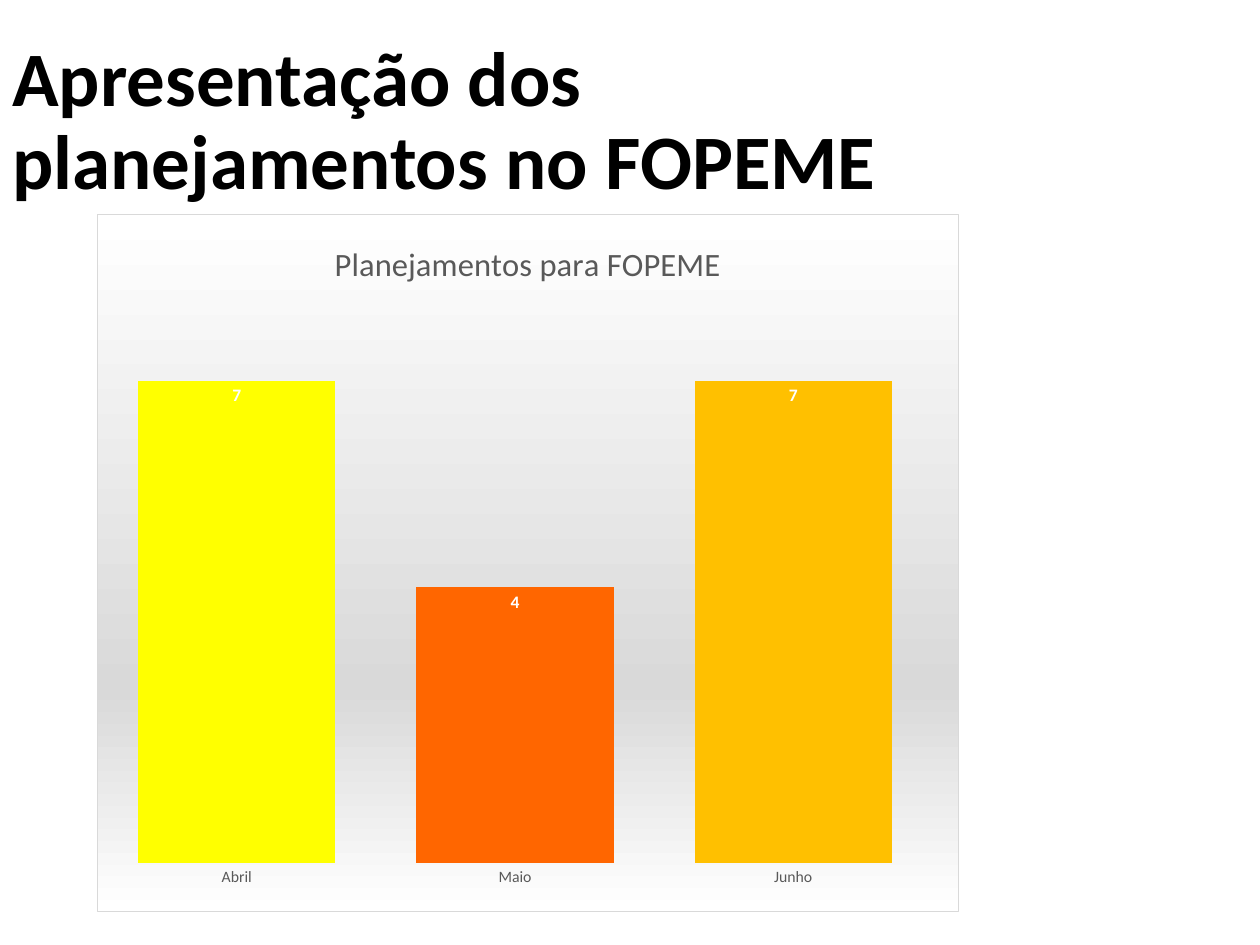
from dataclasses import dataclass

import pptx
import pptx.chart.data
import pptx.dml.color
import pptx.enum.chart
import pptx.enum.text
import pptx.oxml
import pptx.oxml.ns
import pptx.util

Inches = pptx.util.Inches
Pt = pptx.util.Pt
RGBColor = pptx.dml.color.RGBColor

BLACK = RGBColor(0x00, 0x00, 0x00)
WHITE = RGBColor(0xFF, 0xFF, 0xFF)
GREY = RGBColor(0x59, 0x59, 0x59)
SILVER = RGBColor(0xD9, 0xD9, 0xD9)
YELLOW = RGBColor(0xFF, 0xFF, 0x00)
ORANGE = RGBColor(0xFF, 0x66, 0x00)
GOLD = RGBColor(0xFF, 0xC0, 0x00)
FACE = "Calibri"


@dataclass
class Month:
    name: str
    plans: int
    color: RGBColor


MONTHS = [
    Month("Abril", 7, YELLOW),
    Month("Maio", 4, ORANGE),
    Month("Junho", 7, GOLD),
]


def style(font, size: float, color: RGBColor, bold: bool = False) -> None:
    font.name = FACE
    font.size = Pt(size)
    font.bold = bold
    font.color.rgb = color


def add_title(slide, text: str) -> None:
    box = slide.shapes.add_textbox(Inches(0), Inches(0.25), Inches(8.62), Inches(1.45))
    frame = box.text_frame
    frame.word_wrap = True
    frame.margin_right = Inches(0.2)
    frame.vertical_anchor = pptx.enum.text.MSO_ANCHOR.MIDDLE
    para = frame.paragraphs[0]
    para.line_spacing = 0.9
    run = para.add_run()
    run.text = text
    style(run.font, 44, BLACK, True)


def fill_back(chart) -> None:
    """Give the chart area a vertical gradient and a thin border."""
    stops = "".join(
        f'<a:gs pos="{pos * 1000}"><a:srgbClr val="{color}"/></a:gs>'
        for pos, color in [(0, WHITE), (68, SILVER), (100, WHITE)]
    )
    area = pptx.oxml.parse_xml(
        f'<c:spPr {pptx.oxml.ns.nsdecls("c", "a")}>'
        f'<a:gradFill><a:gsLst>{stops}</a:gsLst><a:lin ang="5400000" scaled="0"/></a:gradFill>'
        f'<a:ln w="{Pt(0.75)}"><a:solidFill><a:srgbClr val="{SILVER}"/></a:solidFill></a:ln>'
        "</c:spPr>"
    )
    chart._chartSpace.find(pptx.oxml.ns.qn("c:chart")).addnext(area)


def place_plot(chart, left: float, top: float, width: float, height: float) -> None:
    """Fix the inner plot area, in fractions of the chart."""
    plot = chart._chartSpace.chart.plotArea
    for old in plot.findall(pptx.oxml.ns.qn("c:layout")):
        plot.remove(old)
    parts = '<c:layoutTarget val="inner"/><c:xMode val="edge"/><c:yMode val="edge"/>'
    for key, val in zip("xywh", (left, top, width, height)):
        parts += f'<c:{key} val="{val}"/>'
    plot.insert(0, pptx.oxml.parse_xml(
        f'<c:layout {pptx.oxml.ns.nsdecls("c")}><c:manualLayout>{parts}</c:manualLayout></c:layout>'
    ))


def add_bars(slide, title: str, months: list[Month]) -> None:
    data = pptx.chart.data.CategoryChartData()
    data.categories = [month.name for month in months]
    data.add_series("Series 1", [month.plans for month in months])
    kinds = pptx.enum.chart
    chart = slide.shapes.add_chart(
        kinds.XL_CHART_TYPE.COLUMN_CLUSTERED,
        Inches(0.77), Inches(1.7), Inches(6.84), Inches(5.54), data,
    ).chart
    style(chart.font, 10, BLACK)
    chart.has_legend = False

    # Chart title
    chart.has_title = True
    run = chart.chart_title.text_frame.paragraphs[0].add_run()
    run.text = title
    style(run.font, 18.6, GREY)
    chart.chart_title.include_in_layout = False

    # Axes
    base = chart.category_axis
    base.major_tick_mark = kinds.XL_TICK_MARK.NONE
    base.format.line.fill.background()
    style(base.tick_labels.font, 9, GREY)
    scale = chart.value_axis
    scale.minimum_scale, scale.maximum_scale = 0, 8
    scale.has_major_gridlines = False
    scale.visible = False

    # Columns and their values
    plot = chart.plots[0]
    plot.gap_width = 41
    plot.vary_by_categories = False
    series = plot.series[0]
    series.format.fill.solid()
    series.format.fill.fore_color.rgb = GOLD
    for idx, month in enumerate(months):
        if month.color != GOLD:
            fill = series.points[idx].format.fill
            fill.solid()
            fill.fore_color.rgb = month.color
    labels = series.data_labels
    labels.show_value = True
    labels.position = kinds.XL_LABEL_POSITION.INSIDE_END
    style(labels.font, 10, WHITE, True)

    fill_back(chart)
    place_plot(chart, 0, 0.14, 0.97, 0.79)


def main() -> None:
    deck = pptx.Presentation()
    deck.slide_width, deck.slide_height = Inches(10), Inches(7.5)
    slide = deck.slides.add_slide(deck.slide_layouts[6])
    add_title(slide, "Apresentação dos planejamentos no FOPEME")
    add_bars(slide, "Planejamentos para FOPEME", MONTHS)
    deck.save("out.pptx")


if __name__ == "__main__":
    main()
